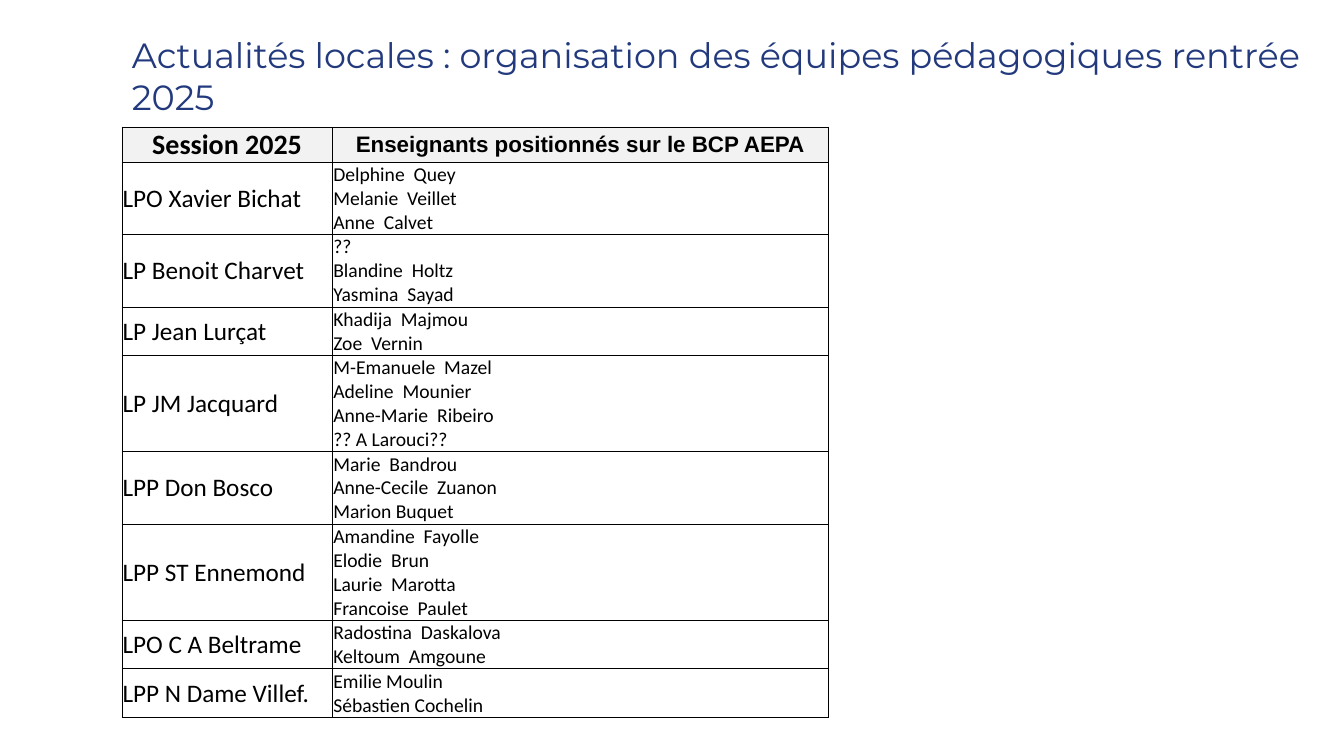
from lxml import etree
from pptx import Presentation
from pptx.dml.color import RGBColor
from pptx.enum.text import MSO_ANCHOR, MSO_AUTO_SIZE, PP_ALIGN
from pptx.oxml import parse_xml
from pptx.util import Cm, Pt

LEFT, CENTER = PP_ALIGN.LEFT, PP_ALIGN.CENTER
TOP, MIDDLE = MSO_ANCHOR.TOP, MSO_ANCHOR.MIDDLE
NS = "http://schemas.openxmlformats.org/drawingml/2006/main"
LINE_HEIGHT = 0.6

TITLE = "Actualités locales : organisation des équipes pédagogiques rentrée 2025"
HEADERS = [("Session 2025", 20, "Calibri"),
           ("Enseignants positionnés sur le BCP AEPA", 16, "Arial")]
TEAMS = [
    ("LPO Xavier Bichat", ["Delphine  Quey", "Melanie  Veillet", "Anne  Calvet"]),
    ("LP Benoit Charvet", ["??", "Blandine  Holtz", "Yasmina  Sayad"]),
    ("LP Jean Lurçat", ["Khadija  Majmou", "Zoe  Vernin"]),
    ("LP JM Jacquard", ["M-Emanuele  Mazel", "Adeline  Mounier",
                        "Anne-Marie  Ribeiro", "?? A Larouci??"]),
    ("LPP Don Bosco", ["Marie  Bandrou", "Anne-Cecile  Zuanon", "Marion Buquet"]),
    ("LPP ST Ennemond", ["Amandine  Fayolle", "Elodie  Brun",
                         "Laurie  Marotta", "Francoise  Paulet"]),
    ("LPO C A Beltrame", ["Radostina  Daskalova", "Keltoum  Amgoune"]),
    ("LPP N Dame Villef.", ["Emilie Moulin", "Sébastien Cochelin"]),
]


def write(tf, lines, size, font="Calibri", color="000000", bold=False, align=LEFT):
    """Fill a text frame with one paragraph per line."""
    for i, line in enumerate(lines):
        p = tf.paragraphs[0] if i == 0 else tf.add_paragraph()
        p.alignment = align
        r = p.add_run()
        r.text = line
        r.font.size = Pt(size)
        r.font.name = font
        r.font.bold = bold
        r.font.color.rgb = RGBColor.from_string(color)


def format_cell(cell, fill=None):
    """Set the margins, thin black borders and optional fill of a cell."""
    cell.vertical_anchor = MIDDLE
    cell.margin_left = cell.margin_right = cell.margin_top = Cm(0.02)
    cell.margin_bottom = 0
    tcPr = cell._tc.get_or_add_tcPr()
    for side in ("lnL", "lnR", "lnT", "lnB"):
        tcPr.append(parse_xml(
            f'<a:{side} xmlns:a="{NS}" w="{Pt(0.5)}"><a:solidFill>'
            f'<a:srgbClr val="000000"/></a:solidFill></a:{side}>'))
    if fill:
        cell.fill.solid()
        cell.fill.fore_color.rgb = RGBColor.from_string(fill)
    else:
        cell.fill.background()


prs = Presentation()
prs.slide_width, prs.slide_height = Cm(33.87), Cm(19.05)
s = prs.slides.add_slide(prs.slide_layouts[5])

# Title
title = s.shapes.title
title.left, title.top, title.width, title.height = Cm(3.07), Cm(0.71), Cm(30.02), Cm(2.39)
tf = title.text_frame
tf.word_wrap = True
tf.auto_size = MSO_AUTO_SIZE.NONE
tf.vertical_anchor = TOP
write(tf, [TITLE], 25, font="Montserrat", color="223A7D")

# Table of teaching teams
table = s.shapes.add_table(len(TEAMS) + 1, 2, Cm(3.07), Cm(3.2), Cm(17.8), Cm(14.68)).table
table.horz_banding = False
table.first_row = False
table.columns[0].width, table.columns[1].width = Cm(5.31), Cm(12.49)

table.rows[0].height = Cm(0.88)
for col, (text, size, font) in enumerate(HEADERS):
    cell = table.cell(0, col)
    format_cell(cell, fill="F2F2F2")
    write(cell.text_frame, [text], size, font=font, bold=True, align=CENTER)

for row, (school, teachers) in enumerate(TEAMS, start=1):
    table.rows[row].height = Cm(LINE_HEIGHT * len(teachers))
    for col, (lines, size) in enumerate([([school], 18), (teachers, 14)]):
        cell = table.cell(row, col)
        format_cell(cell)
        write(cell.text_frame, lines, size)

prs.save("out.pptx")
